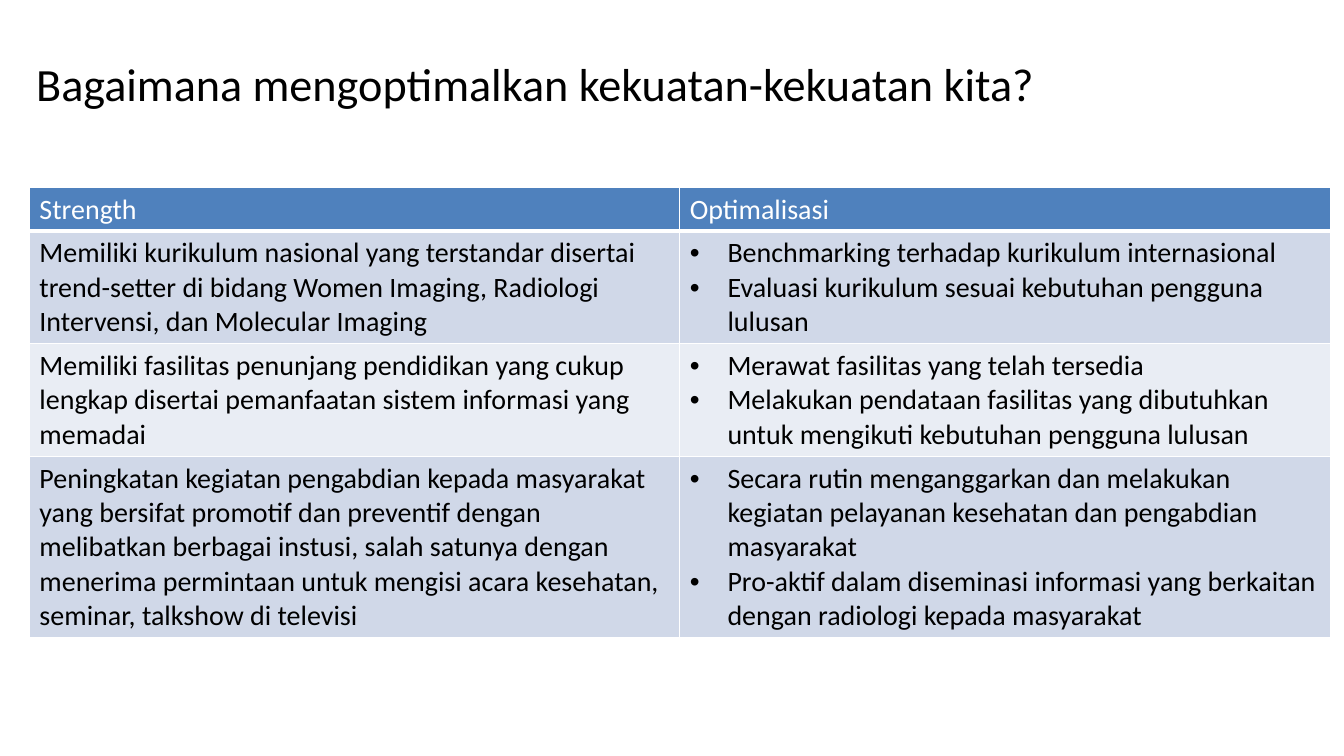
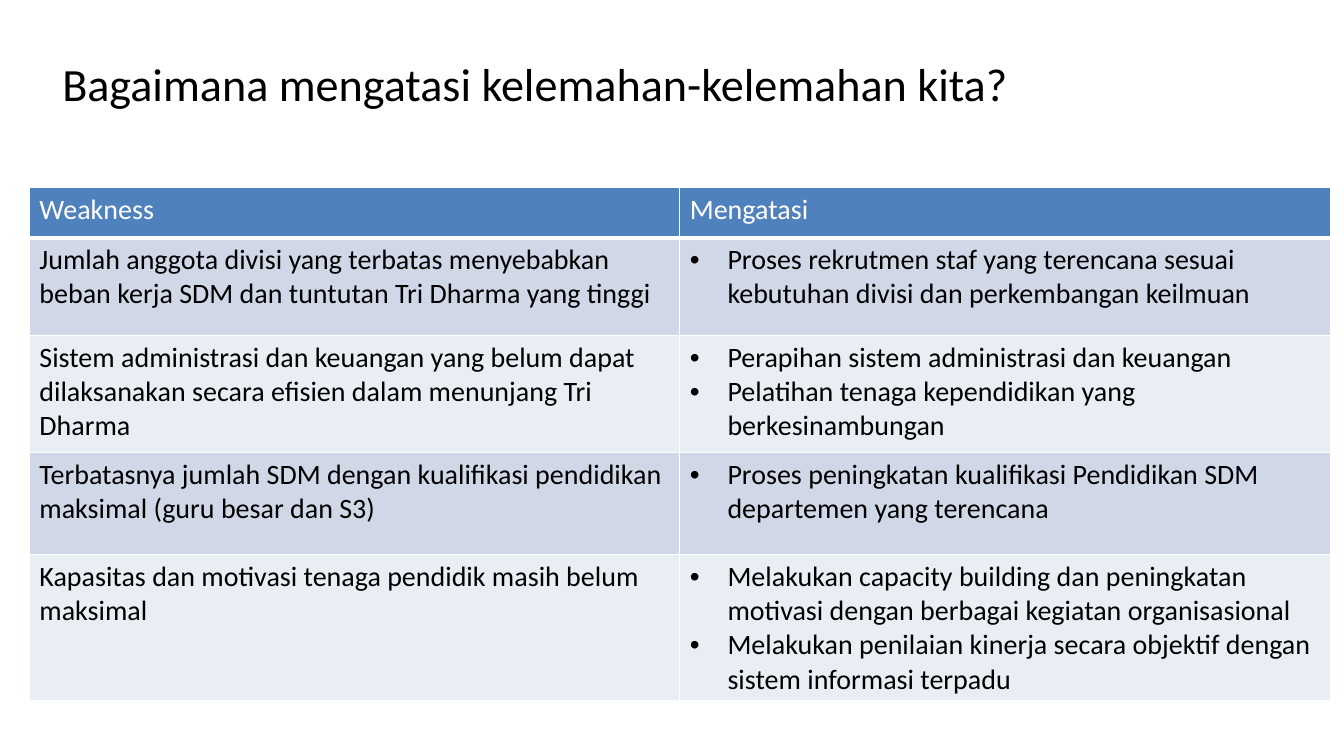
"""Build two slides that pair strengths and weaknesses with actions."""
from lxml import etree
from pptx import Presentation
from pptx.dml.color import RGBColor
from pptx.enum.text import MSO_ANCHOR, PP_ALIGN
from pptx.oxml.ns import qn
from pptx.util import Cm, Pt

MIDDLE = MSO_ANCHOR.MIDDLE
CENTER = PP_ALIGN.CENTER
FONT = "Calibri"
COLORS = {
    "text": "000000",
    "white": "FFFFFF",
    "head": "4F81BD",
    "odd": "D0D8E8",
    "even": "E9EDF4",
}
INDENT = Cm(0.95)
COL = Cm(16.39)

STRENGTHS = [
    ("Strength", ["Optimalisasi"]),
    ("Memiliki kurikulum nasional yang terstandar disertai trend-setter di bidang "
     "Women Imaging, Radiologi Intervensi, dan Molecular Imaging",
     ["Benchmarking terhadap kurikulum internasional",
      "Evaluasi kurikulum sesuai kebutuhan pengguna lulusan"]),
    ("Memiliki fasilitas penunjang pendidikan yang cukup lengkap disertai "
     "pemanfaatan sistem informasi yang memadai",
     ["Merawat fasilitas yang telah tersedia",
      "Melakukan pendataan fasilitas yang dibutuhkan untuk mengikuti kebutuhan "
      "pengguna lulusan"]),
    ("Peningkatan kegiatan pengabdian kepada masyarakat yang bersifat promotif dan "
     "preventif dengan melibatkan berbagai instusi, salah satunya dengan menerima "
     "permintaan untuk mengisi acara kesehatan, seminar, talkshow di televisi",
     ["Secara rutin menganggarkan dan melakukan kegiatan pelayanan kesehatan dan "
      "pengabdian masyarakat",
      "Pro-aktif dalam diseminasi informasi yang berkaitan dengan radiologi kepada "
      "masyarakat"]),
]
WEAKNESSES = [
    ("Weakness", ["Mengatasi"]),
    ("Jumlah anggota divisi yang terbatas menyebabkan beban kerja SDM dan tuntutan "
     "Tri Dharma yang tinggi",
     ["Proses rekrutmen staf yang terencana sesuai kebutuhan divisi dan "
      "perkembangan keilmuan"]),
    ("Sistem administrasi dan keuangan yang belum dapat dilaksanakan secara efisien "
     "dalam menunjang Tri Dharma",
     ["Perapihan sistem administrasi dan keuangan",
      "Pelatihan tenaga kependidikan yang berkesinambungan"]),
    ("Terbatasnya jumlah SDM dengan kualifikasi pendidikan maksimal (guru besar dan S3)",
     ["Proses peningkatan kualifikasi Pendidikan SDM departemen yang terencana"]),
    ("Kapasitas dan motivasi tenaga pendidik masih belum maksimal",
     ["Melakukan capacity building dan peningkatan motivasi dengan berbagai kegiatan "
      "organisasional",
      "Melakukan penilaian kinerja secara objektif dengan sistem informasi terpadu"]),
]
SLIDES = [
    ("Bagaimana mengoptimalkan kekuatan-kekuatan kita?", STRENGTHS,
     [1.09, 2.84, 2.84, 4.57]),
    ("Bagaimana mengatasi kelemahan-kelemahan kita?", WEAKNESSES,
     [1.27, 2.46, 2.95, 2.57, 3.68]),
]


def rgb(name):
    return RGBColor.from_string(COLORS[name])


def add_run(par, text, size, color="text"):
    run = par.add_run()
    run.text = text
    font = run.font
    font.name, font.size, font.bold = FONT, Pt(size), False
    font.color.rgb = rgb(color)


def add_bullet(par):
    props = par._p.get_or_add_pPr()
    props.set("marL", str(INDENT))
    props.set("indent", str(-INDENT))
    etree.SubElement(props, qn("a:buFont"), typeface="Arial")
    etree.SubElement(props, qn("a:buChar"), char="•")


def add_edges(cell, base):
    props = cell._tc.get_or_add_tcPr()
    for side, width in (("L", 1), ("R", 1), ("T", 1), ("B", base)):
        line = etree.SubElement(props, qn(f"a:ln{side}"), w=str(Pt(width)))
        fill = etree.SubElement(line, qn("a:solidFill"))
        etree.SubElement(fill, qn("a:srgbClr"), val=COLORS["white"])


def fill_cell(cell, lines, row, listed):
    head = row == 0
    add_edges(cell, 3 if head else 1)
    cell.fill.solid()
    cell.fill.fore_color.rgb = rgb("head" if head else "odd" if row % 2 else "even")
    frame = cell.text_frame
    for num, text in enumerate(lines):
        par = frame.add_paragraph() if num else frame.paragraphs[0]
        if listed and not head:
            add_bullet(par)
        add_run(par, text, 20, "white" if head else "text")


def add_title(slide, text):
    box = slide.shapes.add_textbox(Cm(0.46), Cm(0.79), Cm(26.06), Cm(2.62))
    frame = box.text_frame
    frame.word_wrap = True
    frame.vertical_anchor = MIDDLE
    par = frame.paragraphs[0]
    par.alignment = CENTER
    add_run(par, text, 33)


def add_grid(slide, rows, heights):
    table = slide.shapes.add_table(
        len(rows), 2, Cm(0.74), Cm(4.72), 2 * COL, Cm(sum(heights))).table
    for col in table.columns:
        col.width = COL
    for num, ((point, acts), height) in enumerate(zip(rows, heights)):
        table.rows[num].height = Cm(height)
        fill_cell(table.cell(num, 0), [point], num, False)
        fill_cell(table.cell(num, 1), acts, num, True)


def main():
    deck = Presentation()
    deck.slide_width, deck.slide_height = Cm(33.87), Cm(19.05)
    for title, rows, heights in SLIDES:
        slide = deck.slides.add_slide(deck.slide_layouts[6])
        add_title(slide, title)
        add_grid(slide, rows, heights)
    deck.save("out.pptx")


if __name__ == "__main__":
    main()
